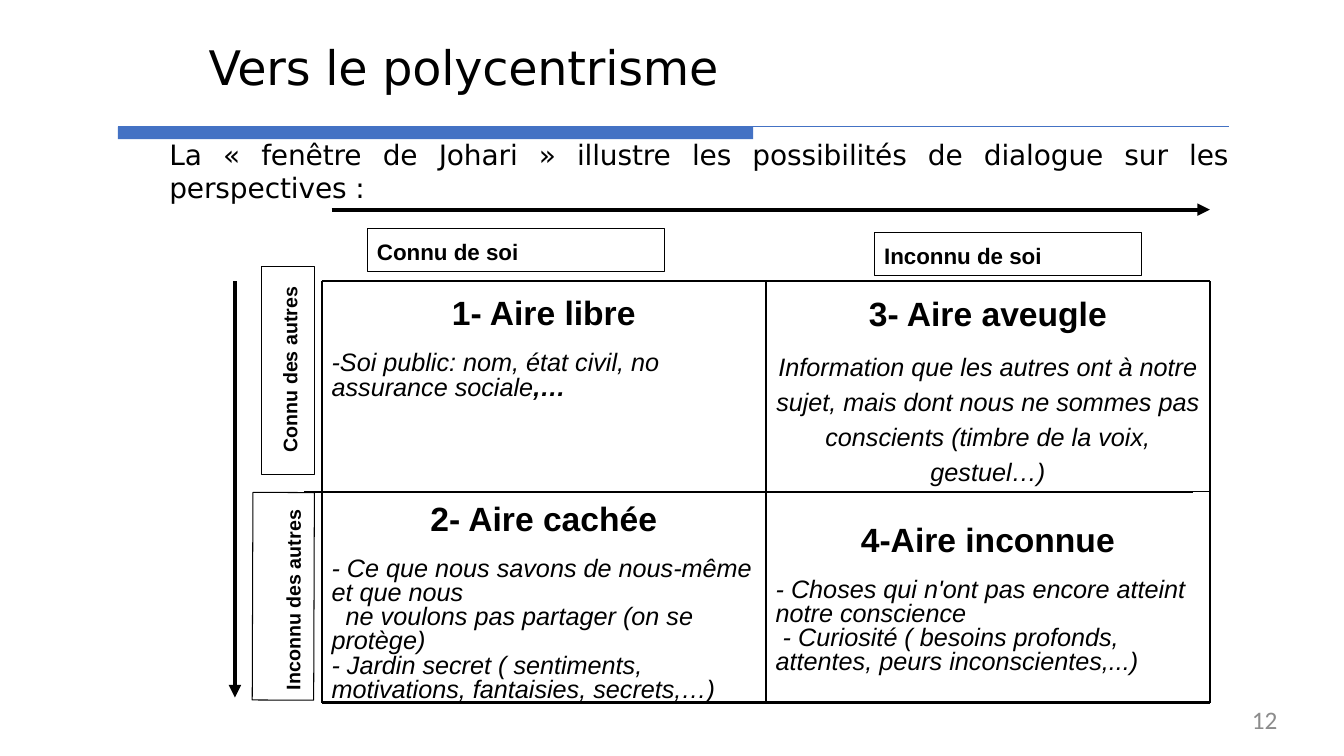
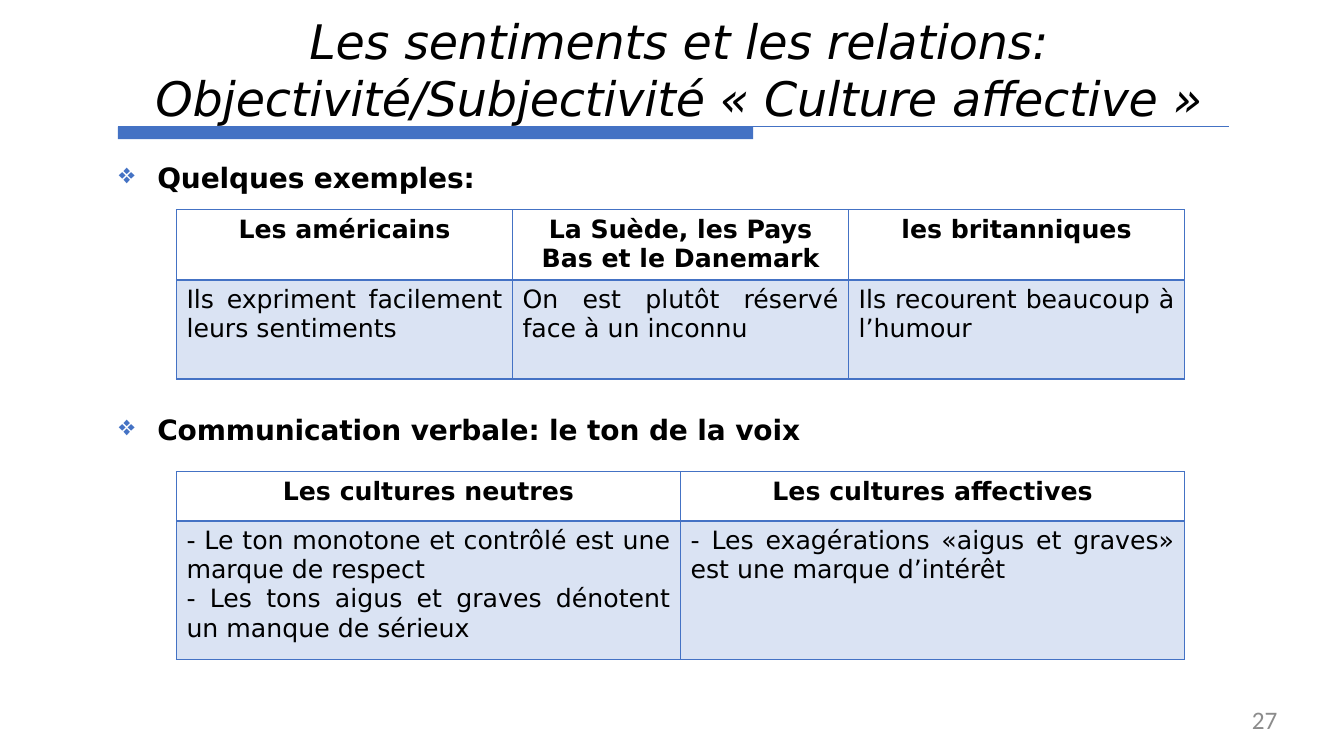
from dataclasses import dataclass, field
from typing import Any

from lxml import etree
from pptx import Presentation
from pptx import util as u
from pptx.dml import color
from pptx.enum import shapes, text
from pptx.oxml import ns

COLORS = {"ink": "000000", "accent": "4472C4", "tint": "DAE3F3", "number": "8C8C8C"}
LEFT, CENTER, RIGHT, JUSTIFY = (
    text.PP_ALIGN.LEFT, text.PP_ALIGN.CENTER, text.PP_ALIGN.RIGHT, text.PP_ALIGN.JUSTIFY)
TOP, MIDDLE = text.MSO_ANCHOR.TOP, text.MSO_ANCHOR.MIDDLE

# Text styles
SANS = "DejaVu Sans"
TITLE = {"name": SANS, "size": u.Pt(34), "bold": False, "italic": False}
LEAD = {"name": SANS, "size": u.Pt(20), "bold": False}
BULLET = LEAD | {"bold": True}
CELL = {"name": SANS, "size": u.Pt(18), "bold": False}
HEADER = CELL | {"bold": True}
NUMBER = {"name": "Calibri", "size": u.Pt(18)}
AREA = {"name": "Arial", "size": u.Pt(24), "bold": True}
DETAIL = {"name": "Arial", "size": u.Pt(18), "bold": False, "italic": True}
LABEL = {"name": "Arial", "size": u.Pt(16), "bold": True}
SIDE_LABEL = LABEL | {"size": u.Pt(14)}
TIGHT = {"line_spacing": 0.8}
LOOSE = {"line_spacing": 1.15, "space_after": u.Pt(10)}
BEFORE, AFTER = {"space_before": u.Pt(4.3)}, {"space_after": u.Pt(10)}


@dataclass
class Line:
    """One paragraph: its runs share a font unless a run overrides it."""
    content: str
    font: dict[str, Any]
    align: Any = LEFT
    layout: dict[str, Any] = field(default_factory=dict)
    ending: str = ""
    indent: float = 0
    tracking: bool = False
    bullet: str = ""


@dataclass
class Box:
    left: float
    top: float
    width: float
    height: float
    lines: list[Line]
    rotation: float = 0
    anchor: Any = TOP
    margin_left: float = 0.1


@dataclass
class Grid:
    top: float
    heights: tuple[float, float]
    headers: list[str]
    bodies: list[list[str]]


def rgb(name: str) -> color.RGBColor:
    return color.RGBColor.from_string(COLORS[name])


def apply(target: Any, values: dict[str, Any]) -> None:
    for name, value in values.items():
        setattr(target, name, value)


def place(shape: Any, left: float, top: float, width: float, height: float) -> None:
    apply(shape, {"left": u.Inches(left), "top": u.Inches(top),
                  "width": u.Inches(width), "height": u.Inches(height)})


# Text
def add_run(paragraph: Any, content: str, font: dict[str, Any], ink: str, tracking: bool) -> None:
    run = paragraph.add_run()
    run.text = content
    apply(run.font, font)
    run.font.color.rgb = rgb(ink)
    if tracking:
        run._r.get_or_add_rPr().set("spc", "-10")


def add_bullet(paragraph: Any, character: str) -> None:
    properties = paragraph._p.get_or_add_pPr()
    properties.set("marL", str(u.Inches(0.39)))
    properties.set("indent", str(u.Inches(-0.38)))
    bullet_color = etree.SubElement(properties, ns.qn("a:buClr"))
    etree.SubElement(bullet_color, ns.qn("a:srgbClr"), val=COLORS["accent"])
    etree.SubElement(properties, ns.qn("a:buChar"), char=character)


def write(frame: Any, lines: list[Line], ink: str = "ink") -> None:
    for index, line in enumerate(lines):
        paragraph = frame.add_paragraph() if index else frame.paragraphs[0]
        if line.bullet:
            add_bullet(paragraph, line.bullet)
        elif line.indent:
            paragraph._p.get_or_add_pPr().set("indent", str(u.Inches(line.indent)))
        apply(paragraph, {"alignment": line.align} | line.layout)
        for part, content in enumerate(line.content.split("\n")):
            if part:
                paragraph.add_line_break()
            add_run(paragraph, content, line.font, ink, line.tracking)
        if line.ending:
            add_run(paragraph, line.ending, line.font | {"bold": True}, ink, line.tracking)


def set_frame(frame: Any, margins: tuple[float, float, float, float], anchor: Any = TOP) -> None:
    left, top, right, bottom = map(u.Inches, margins)
    apply(frame, {"word_wrap": True, "auto_size": text.MSO_AUTO_SIZE.NONE,
                  "vertical_anchor": anchor, "margin_left": left, "margin_top": top,
                  "margin_right": right, "margin_bottom": bottom})


def add_text(slide: Any, box: Box, ink: str = "ink") -> None:
    shape = slide.shapes.add_textbox(0, 0, 0, 0)
    place(shape, box.left, box.top, box.width, box.height)
    set_frame(shape.text_frame, (0, 0.01, 0, 0))
    write(shape.text_frame, box.lines, ink)


# Shapes
def add_outlined_box(slide: Any, box: Box) -> None:
    shape = slide.shapes.add_shape(shapes.MSO_SHAPE.RECTANGLE, 0, 0, 0, 0)
    place(shape, box.left, box.top, box.width, box.height)
    shape.rotation = box.rotation
    shape.shadow.inherit = False
    shape.fill.background()
    shape.line.color.rgb = rgb("ink")
    shape.line.width = u.Pt(0.75)
    set_frame(shape.text_frame, (box.margin_left, 0.05, 0.1, 0.05), box.anchor)
    write(shape.text_frame, box.lines)


def add_line(slide: Any, start: tuple[float, float], end: tuple[float, float],
             width: float, ink: str = "ink", arrow: bool = False) -> None:
    points = [u.Inches(value) for value in (*start, *end)]
    line = slide.shapes.add_connector(shapes.MSO_CONNECTOR.STRAIGHT, *points)
    line.line.color.rgb = rgb(ink)
    line.line.width = u.Pt(width)
    if arrow:
        etree.SubElement(line.line._get_or_add_ln(), ns.qn("a:tailEnd"), type="triangle")
    etree.SubElement(line._element.spPr, ns.qn("a:effectLst"))


# Tables
def set_borders(cell: Any, bottom: float) -> None:
    properties = cell._tc.get_or_add_tcPr()
    for index, (side, width) in enumerate((("L", 1), ("R", 1), ("T", 1), ("B", bottom))):
        border = etree.Element(ns.qn(f"a:ln{side}"), w=str(u.Pt(width)))
        fill = etree.SubElement(border, ns.qn("a:solidFill"))
        etree.SubElement(fill, ns.qn("a:srgbClr"), val=COLORS["accent"])
        properties.insert(index, border)


def add_grid(slide: Any, grid: Grid) -> None:
    count, width = len(grid.headers), 10
    frame = slide.shapes.add_table(2, count, u.Inches(1.75), u.Inches(grid.top),
                                   u.Inches(width), u.Inches(sum(grid.heights)))
    table = frame.table
    apply(table, {"first_row": False, "horz_banding": False})
    for row, height in zip(table.rows, grid.heights):
        row.height = u.Inches(height)
    for index, (header, body) in enumerate(zip(grid.headers, grid.bodies)):
        table.columns[index].width = u.Inches(width / count)
        top, bottom = table.cell(0, index), table.cell(1, index)
        top.fill.background()
        bottom.fill.solid()
        bottom.fill.fore_color.rgb = rgb("tint")
        set_borders(top, 2)
        set_borders(bottom, 1)
        write(top.text_frame, [Line(header, HEADER, CENTER)])
        write(bottom.text_frame, [Line(item, CELL, JUSTIFY) for item in body])


# Shared slide base: title, band, rule and number
def add_base(presentation: Any, title: Box, number: str) -> Any:
    slide = presentation.slides.add_slide(presentation.slide_layouts[5])
    place(slide.shapes.title, title.left, title.top, title.width, title.height)
    set_frame(slide.shapes.title.text_frame, (0, 0.01, 0, 0))
    write(slide.shapes.title.text_frame, title.lines)
    band = slide.shapes.add_shape(shapes.MSO_SHAPE.RECTANGLE, 0, 0, 0, 0)
    place(band, 1.17, 1.26, 6.3, 0.12)
    band.shadow.inherit = False
    band.fill.solid()
    band.fill.fore_color.rgb = rgb("accent")
    band.line.fill.background()
    add_line(slide, (1.17, 1.25), (12.19, 1.25), 0.72, "accent")
    add_text(slide, Box(9.6, 6.98, 3.07, 0.3, [Line(number, NUMBER, RIGHT)]), "number")
    return slide


def build_johari(presentation: Any) -> None:
    slide = add_base(presentation, Box(2.07, 0.37, 5.86, 0.59, [
        Line("Vers le polycentrisme", TITLE, tracking=True)]), "12")
    add_text(slide, Box(1.68, 1.35, 10.5, 0.69, [Line(
        "La « fenêtre de Johari » illustre les possibilités de dialogue sur les perspectives :",
        LEAD, JUSTIFY, tracking=True)]))

    # Four areas, column by column
    left, top, width, height = 3.19, 2.79, 4.405, 2.09
    areas = [
        (TOP, [
            Line("1- Aire libre", AREA, CENTER, LOOSE),
            Line("-Soi public: nom, état civil, no assurance sociale", DETAIL,
                 layout=TIGHT | BEFORE, ending=",…")]),
        (MIDDLE, [
            Line("2- Aire cachée", AREA, CENTER, LOOSE),
            Line("- Ce que nous savons de nous-même et que nous", DETAIL, layout=TIGHT | BEFORE),
            Line("ne voulons pas partager (on se protège)", DETAIL, layout=TIGHT, indent=0.14),
            Line("- Jardin secret ( sentiments, motivations, fantaisies, secrets,…)", DETAIL,
                 layout=TIGHT | AFTER)]),
        (MIDDLE, [
            Line("3- Aire aveugle", AREA, CENTER, LOOSE),
            Line("Information que les autres ont à notre sujet, mais dont nous ne sommes "
                 "pas conscients (timbre de la voix, gestuel…)", DETAIL, CENTER, LOOSE)]),
        (MIDDLE, [
            Line("4-Aire inconnue", AREA, CENTER, AFTER),
            Line("- Choses qui n'ont pas encore atteint notre conscience", DETAIL,
                 layout=TIGHT | BEFORE),
            Line("- Curiosité ( besoins profonds, attentes, peurs inconscientes,...)", DETAIL,
                 layout=TIGHT | AFTER, indent=0.07)]),
    ]
    for index, (anchor, lines) in enumerate(areas):
        column, row = divmod(index, 2)
        add_outlined_box(slide, Box(left + column * width, top + row * height,
                                    width, height, lines, anchor=anchor))

    # Window frame and axis arrows
    right, bottom = left + 2 * width, top + 2 * height
    for index, shift in enumerate((0, -0.17, 0)):
        x, y = left + index * width, top + index * height
        add_line(slide, (left + shift, y), (right + shift, y), 1.5)
        add_line(slide, (x, top), (x, bottom), 1.5)
    add_line(slide, (3.29, 2.08), (right, 2.08), 3, arrow=True)
    add_line(slide, (2.33, top), (2.33, 6.92), 3, arrow=True)

    # Axis labels
    for box in (
        Box(3.64, 2.27, 2.95, 0.42, [Line("Connu de soi", LABEL, layout=LOOSE)]),
        Box(8.67, 2.31, 2.65, 0.42, [Line("Inconnu de soi", LABEL, layout=LOOSE)]),
        Box(1.78, 5.61, 2.06, 0.61, [
            Line("Inconnu des autres", SIDE_LABEL, layout=AFTER | {"line_spacing": 2.0})], 270.2),
        Box(1.82, 3.41, 2.07, 0.53, [
            Line("Connu des autres", SIDE_LABEL, layout=AFTER | {"line_spacing": 1.5})],
            270, margin_left=0.22),
    ):
        add_outlined_box(slide, box)


def build_feelings(presentation: Any) -> None:
    slide = add_base(presentation, Box(0.55, 0.11, 12.37, 1.16, [Line(
        "Les sentiments et les relations:\nObjectivité/Subjectivité «\u00a0Culture affective\u00a0»",
        TITLE | {"italic": True}, CENTER, tracking=True)]), "27")
    for top, heading in ((1.58, "Quelques exemples:"),
                         (4.08, "Communication verbale: le ton de la voix")):
        add_text(slide, Box(1.17, top, 11.33, 0.4, [
            Line(heading, BULLET, JUSTIFY, tracking=True, bullet="❖")]))
    for grid in (
        Grid(2.08, (0.7, 0.98),
             ["Les américains", "La Suède, les Pays Bas et le Danemark", "les britanniques"],
             [["Ils expriment facilement leurs sentiments"],
              ["On est plutôt réservé face à un inconnu"],
              ["Ils recourent beaucoup à l’humour"]]),
        Grid(4.68, (0.49, 1.37),
             ["Les cultures neutres", "Les cultures affectives"],
             [["- Le ton monotone et contrôlé est une marque de respect",
               "- Les tons aigus et graves dénotent un manque de sérieux"],
              ["- Les exagérations «aigus et graves» est une marque d’intérêt"]]),
    ):
        add_grid(slide, grid)


def main() -> None:
    presentation = Presentation()
    apply(presentation, {"slide_width": u.Inches(13.33), "slide_height": u.Inches(7.5)})
    build_johari(presentation)
    build_feelings(presentation)
    presentation.save("out.pptx")


if __name__ == "__main__":
    main()
